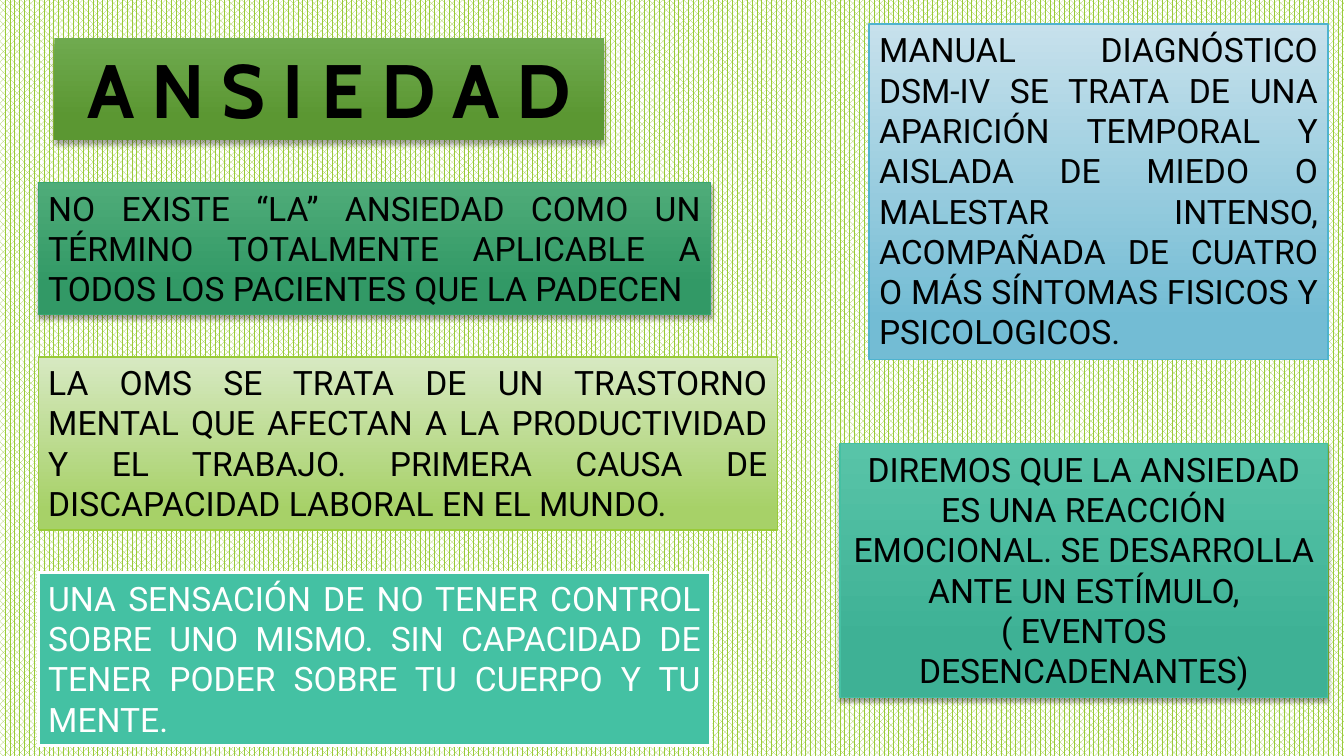
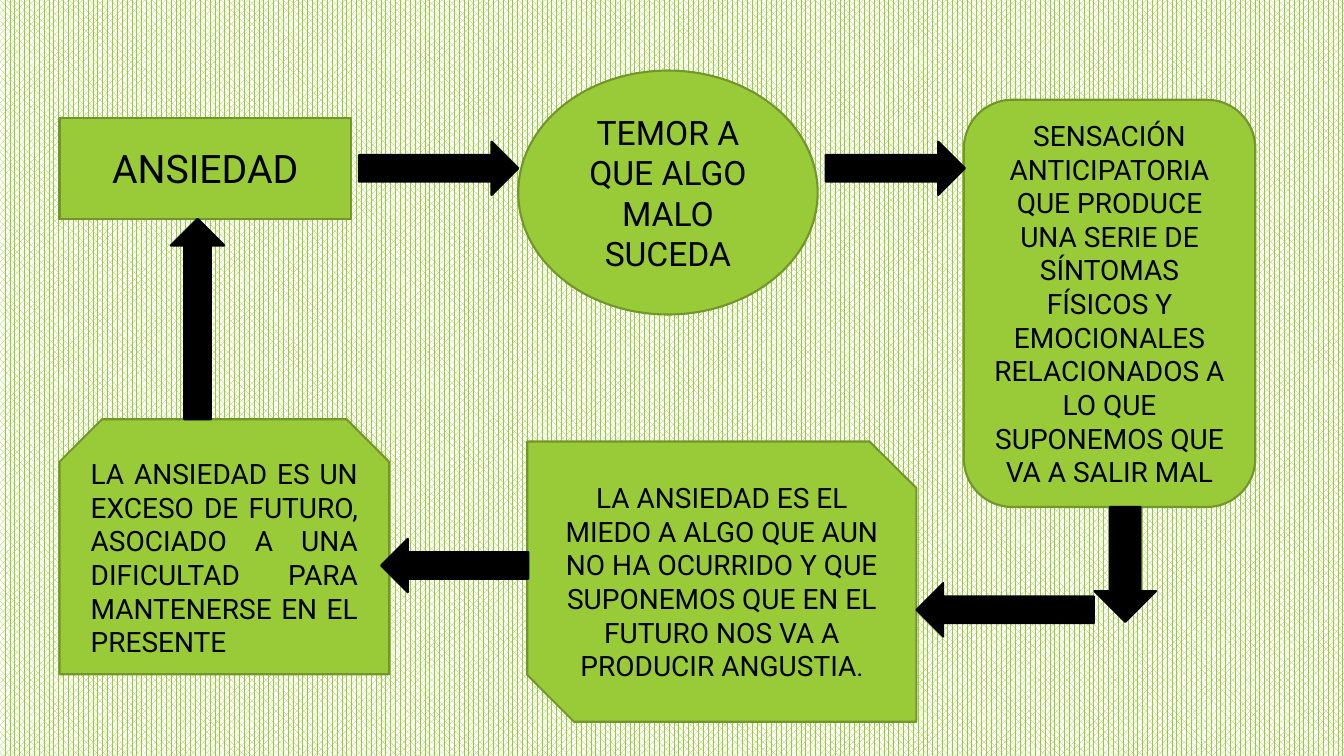
from lxml.etree import SubElement
from pptx import Presentation
from pptx.dml.color import RGBColor
from pptx.enum.dml import MSO_PATTERN
from pptx.enum.shapes import MSO_SHAPE
from pptx.enum.text import MSO_ANCHOR, MSO_AUTO_SIZE, PP_ALIGN
from pptx.oxml import parse_xml
from pptx.oxml.ns import nsdecls, qn
from pptx.util import Inches, Pt

BLACK = RGBColor(0x00, 0x00, 0x00)
WHITE = RGBColor(0xFF, 0xFF, 0xFF)
LIME = RGBColor(0x99, 0xCB, 0x38)
OLIVE = RGBColor(0x71, 0x96, 0x29)
TEAL = RGBColor(0x44, 0xC1, 0xA3)
TEAL_LIGHT = RGBColor(0x58, 0xC4, 0xA8)
TEAL_DARK = RGBColor(0x3E, 0xB1, 0x95)
GREEN = RGBColor(0x37, 0xA7, 0x6F)
GREEN_LIGHT = RGBColor(0x4F, 0xAC, 0x79)
GREEN_DARK = RGBColor(0x32, 0x99, 0x66)
LEAF_LIGHT = RGBColor(0x6F, 0xAA, 0x4F)
LEAF_DARK = RGBColor(0x5B, 0x97, 0x32)
LIME_PALE = RGBColor(0xD7, 0xE9, 0xC2)
LIME_SOFT = RGBColor(0xA7, 0xD1, 0x68)
BLUE = RGBColor(0x4E, 0xB3, 0xCF)
BLUE_PALE = RGBColor(0xC7, 0xE1, 0xEC)
BLUE_SOFT = RGBColor(0x73, 0xBC, 0xD4)

BODY_FONT = "Roboto"
TITLE_FONT = "Cabin"
CENTER, JUSTIFY = PP_ALIGN.CENTER, PP_ALIGN.JUSTIFY

LEFT_CARDS = [
    (6.67, 1.31, (GREEN_LIGHT, GREEN_DARK, 0.78), (GREEN, 1), True, BLACK, JUSTIFY,
     "NO EXISTE “LA” ANSIEDAD COMO UN TÉRMINO TOTALMENTE APLICABLE A TODOS "
     "LOS PACIENTES QUE LA PADECEN"),
    (7.33, 1.72, (LIME_PALE, LIME_SOFT, 0.88), (LIME, 1), False, BLACK, JUSTIFY,
     "LA OMS SE TRATA DE UN TRASTORNO MENTAL QUE AFECTAN A LA PRODUCTIVIDAD "
     "Y EL TRABAJO. PRIMERA CAUSA DE DISCAPACIDAD LABORAL EN EL MUNDO."),
    (6.67, 1.72, TEAL, (WHITE, 2), False, WHITE, JUSTIFY,
     "UNA SENSACIÓN DE NO TENER CONTROL SOBRE UNO MISMO. SIN CAPACIDAD DE "
     "TENER PODER SOBRE TU CUERPO Y TU MENTE."),
]
RIGHT_CARDS = [
    (4.55, 3.33, (BLUE_PALE, BLUE_SOFT, 0.88), (BLUE, 1), False, BLACK, JUSTIFY,
     "MANUAL DIAGNÓSTICO DSM-IV SE TRATA DE UNA APARICIÓN TEMPORAL Y AISLADA "
     "DE MIEDO O MALESTAR INTENSO, ACOMPAÑADA DE CUATRO O MÁS SÍNTOMAS "
     "FISICOS Y PSICOLOGICOS."),
    (4.84, 2.52, (TEAL_LIGHT, TEAL_DARK, 0.78), (TEAL, 1), True, BLACK, CENTER,
     "DIREMOS QUE LA ANSIEDAD ES UNA REACCIÓN EMOCIONAL. SE DESARROLLA ANTE "
     "UN ESTÍMULO,\n( EVENTOS DESENCADENANTES)"),
]


def paint(sp, fill, line=None):
    if isinstance(fill, RGBColor):
        sp.fill.solid()
        sp.fill.fore_color.rgb = fill
    else:
        light, dark, end = fill
        sp.fill.gradient()
        sp.fill.gradient_angle = 270
        for stop, color, pos in zip(sp.fill.gradient_stops, (light, dark), (0, end)):
            stop.color.rgb = color
            stop.position = pos
    if line:
        sp.line.color.rgb, sp.line.width = line[0], Pt(line[1])
    else:
        sp.line.fill.background()
    sp.shadow.inherit = False


def drop_shadow(sp, blur, dist):
    effects = sp._element.spPr.find(qn("a:effectLst"))
    shadow = SubElement(effects, qn("a:outerShdw"), blurRad=str(Pt(blur)),
                        dist=str(Pt(dist)), dir="5400000", algn="ctr", rotWithShape="0")
    color = SubElement(shadow, qn("a:srgbClr"), val="000000")
    SubElement(color, qn("a:alpha"), val="35000")


def write(sp, runs, align, color=BLACK, font=BODY_FONT, anchor=MSO_ANCHOR.MIDDLE):
    tf = sp.text_frame
    tf.word_wrap = True
    tf.auto_size = MSO_AUTO_SIZE.NONE
    tf.vertical_anchor = anchor
    p = tf.paragraphs[0]
    p.alignment = align
    for text, size in runs:
        for i, part in enumerate(text.split("\n")):
            if i:
                p.add_line_break()
            r = p.add_run()
            r.text = part
            r.font.name, r.font.size = font, Pt(size)
            r.font.color.rgb = color
    return p


def add_box(s, kind, x, y, w, h):
    return s.shapes.add_shape(kind, Inches(x), Inches(y), Inches(w), Inches(h))


def add_title(s, x, y, w, h, text):
    sp = s.shapes.title
    sp.left, sp.top, sp.width, sp.height = (Inches(v) for v in (x, y, w, h))
    paint(sp, (LEAF_LIGHT, LEAF_DARK, 0.78))
    drop_shadow(sp, 4, 3)
    p = write(sp, [(text, 54)], CENTER, font=TITLE_FONT, anchor=MSO_ANCHOR.TOP)
    r = p.runs[0]
    r.font.bold = True
    r.font._element.insert(0, parse_xml(
        f'<a:ln {nsdecls("a")} w="9525"><a:solidFill><a:srgbClr val="{WHITE}"/>'
        '</a:solidFill></a:ln>'))


def add_column(s, x, y, gap, cards, from_right=False):
    for w, h, fill, line, shadow, color, align, text in cards:
        sp = add_box(s, MSO_SHAPE.RECTANGLE, x - w if from_right else x, y, w, h)
        paint(sp, fill, line)
        if shadow:
            drop_shadow(sp, 3, 2)
        write(sp, [(text, 24)], align, color, anchor=MSO_ANCHOR.TOP)
        y += h + gap


def add_node(s, kind, x, y, w, h, runs, align=CENTER):
    sp = add_box(s, kind, x, y, w, h)
    paint(sp, LIME, (OLIVE, 1.5))
    write(sp, runs, align)


def add_arrow(s, x1, y1, x2, y2, thick=0.53):
    if y1 == y2:
        kind = MSO_SHAPE.RIGHT_ARROW if x2 > x1 else MSO_SHAPE.LEFT_ARROW
        box = (min(x1, x2), y1 - thick / 2, abs(x2 - x1), thick)
    else:
        kind = MSO_SHAPE.DOWN_ARROW if y2 > y1 else MSO_SHAPE.UP_ARROW
        box = (x1 - thick / 2, min(y1, y2), thick, abs(y2 - y1))
    paint(add_box(s, kind, *box), BLACK, (BLACK, 1.5))


def add_cycle(s, x, y):
    nodes = [
        (MSO_SHAPE.RECTANGLE, 0, 0.47, 2.89, 1, [("ANSIEDAD", 28)], CENTER),
        (MSO_SHAPE.OVAL, 4.55, 0, 2.97, 2.42, [("TEMOR A QUE ALGO MALO SUCEDA", 24)], CENTER),
        (MSO_SHAPE.ROUNDED_RECTANGLE, 8.97, 0.29, 2.89, 4.04,
         [("SENSACIÓN ANTICIPATORIA QUE PRODUCE UNA SERIE DE SÍNTOMAS FÍSICOS Y "
           "EMOCIONALES RELACIONADOS A LO QUE SUPONEMOS QUE VA A SALIR MAL", 20)], CENTER),
        (MSO_SHAPE.SNIP_2_DIAG_RECTANGLE, 4.64, 3.68, 3.86, 2.78,
         [("LA ANSIEDAD ES EL MIEDO A ALGO QUE AUN NO HA OCURRIDO Y QUE "
           "SUPONEMOS QUE EN EL FUTURO NOS VA A PRODUCIR ANGUSTIA", 20), (".", 18)], CENTER),
        (MSO_SHAPE.SNIP_2_SAME_RECTANGLE, 0, 3.46, 3.27, 2.53,
         [("LA ANSIEDAD ES UN EXCESO DE FUTURO, ASOCIADO A UNA DIFICULTAD PARA "
           "MANTENERSE EN EL PRESENTE", 20)], JUSTIFY),
    ]
    for kind, dx, dy, w, h, runs, align in nodes:
        add_node(s, kind, x + dx, y + dy, w, h, runs, align)
    arrows = [
        (2.97, 0.97, 4.55, 0.97),
        (7.6, 0.97, 8.98, 0.97),
        (10.57, 4.33, 10.57, 5.47, 0.61),
        (10.26, 5.35, 8.5, 5.35),
        (4.65, 4.91, 3.19, 4.91),
        (1.37, 3.46, 1.37, 1.47),
    ]
    for x1, y1, x2, y2, *thick in arrows:
        add_arrow(s, x + x1, y + y1, x + x2, y + y2, *thick)


def set_background(master):
    fill = master.background.fill
    fill.patterned()
    fill.pattern = MSO_PATTERN.PERCENT_70
    fill.fore_color.rgb = LIME
    fill.back_color.rgb = WHITE


def add_definitions_slide(prs):
    s = prs.slides.add_slide(prs.slide_layouts[5])
    add_title(s, 0.54, 0.38, 5.45, 1.01, "A N S I E D A D")
    add_column(s, 0.38, 1.81, 0.42, LEFT_CARDS)
    add_column(s, 13.17, 0.24, 0.83, RIGHT_CARDS, from_right=True)


def add_cycle_slide(prs):
    s = prs.slides.add_slide(prs.slide_layouts[6])
    add_cycle(s, 0.59, 0.7)


def main():
    prs = Presentation()
    prs.slide_width, prs.slide_height = Inches(13.33), Inches(7.5)
    set_background(prs.slide_master)
    add_definitions_slide(prs)
    add_cycle_slide(prs)
    prs.save("out.pptx")


if __name__ == "__main__":
    main()
